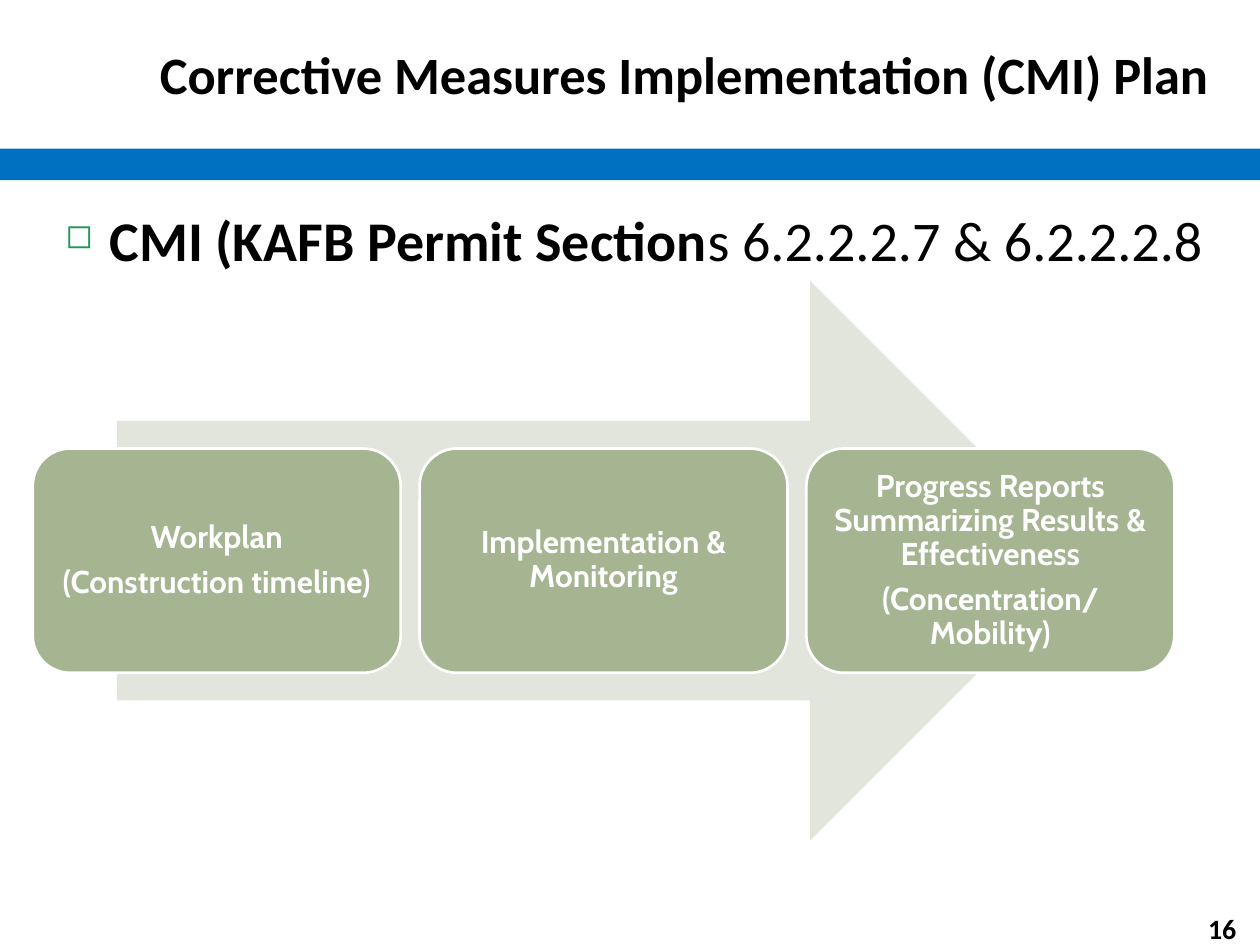
import pptx
import pptx.util
import pptx.dml.color
import pptx.enum.shapes
import pptx.enum.text
import pptx.oxml
import pptx.oxml.ns
from pptx.util import Inches, Pt

# Content
TITLE = "Corrective Measures Implementation (CMI) Plan"
BULLET_RUNS = [("CMI (KAFB Permit Section", True), ("s 6.2.2.2.7 & 6.2.2.2.8", False)]
STEPS = [
    ["Workplan", "(Construction timeline)"],
    ["Implementation & Monitoring"],
    ["Progress Reports Summarizing Results & Effectiveness", "(Concentration/Mobility)"],
]
PAGE_NUMBER = "16"

THEME = {
    "band": "0070C0", "arrow": "E1E5DC", "step": "A5B592", "bullet": "199755",
    "light": "FFFFFF", "dark": "000000",
    "text_font": "Calibri", "step_font": "Cabin",
    "title_size": 30, "bullet_size": 32, "step_size": 18, "page_size": 16,
}

# Step layout
STEP_LEFT, STEP_TOP, STEP_WIDTH, STEP_HEIGHT, STEP_GAP = 0.26, 3.56, 2.92, 1.78, 0.15

SHAPES = pptx.enum.shapes.MSO_SHAPE
MIDDLE = pptx.enum.text.MSO_ANCHOR.MIDDLE
CENTER = pptx.enum.text.PP_ALIGN.CENTER


def color(name):
    return pptx.dml.color.RGBColor.from_string(THEME[name])


def add_run(paragraph, text, size, font="text_font", ink="dark", bold=True):
    run = paragraph.add_run()
    run.text = text
    run.font.name = THEME[font]
    run.font.size = Pt(THEME[size])
    run.font.bold = bold
    run.font.color.rgb = color(ink)


def add_text_frame(slide, left, top, width, height, anchor=MIDDLE):
    box = slide.shapes.add_textbox(Inches(left), Inches(top), Inches(width), Inches(height))
    frame = box.text_frame
    frame.word_wrap = True
    frame.vertical_anchor = anchor
    return frame


def add_filled_shape(slide, kind, left, top, width, height, fill):
    shape = slide.shapes.add_shape(
        kind, Inches(left), Inches(top), Inches(width), Inches(height))
    shape.shadow.inherit = False
    shape.fill.solid()
    shape.fill.fore_color.rgb = color(fill)
    shape.line.fill.background()
    return shape


def set_bullet(paragraph, indent):
    properties = paragraph._p.get_or_add_pPr()
    properties.set("marL", str(Inches(indent)))
    properties.set("indent", str(-Inches(indent)))
    namespace = pptx.oxml.ns.nsdecls("a")
    for element in (
        f'<a:buClr {namespace}><a:srgbClr val="{THEME["bullet"]}"/></a:buClr>',
        f'<a:buSzPct {namespace} val="60000"/>',
        f'<a:buChar {namespace} char="◻"/>',
    ):
        properties.append(pptx.oxml.parse_xml(element))


def add_step(slide, index, lines):
    left = STEP_LEFT + index * (STEP_WIDTH + STEP_GAP)
    step = add_filled_shape(slide, SHAPES.ROUNDED_RECTANGLE,
                            left, STEP_TOP, STEP_WIDTH, STEP_HEIGHT, "step")
    step.line.color.rgb = color("light")
    step.line.width = Pt(1.5)
    frame = step.text_frame
    frame.word_wrap = True
    frame.vertical_anchor = MIDDLE
    frame.margin_left = frame.margin_right = Inches(0.07)
    frame.margin_top = frame.margin_bottom = Inches(0.07)
    for number, line in enumerate(lines):
        paragraph = frame.add_paragraph() if number else frame.paragraphs[0]
        paragraph.alignment = CENTER
        paragraph.line_spacing = 0.9
        paragraph.space_after = Pt(0.35 * THEME["step_size"])
        add_run(paragraph, line, "step_size", "step_font", "light")


def main():
    presentation = pptx.Presentation()
    presentation.slide_width = Inches(10)
    presentation.slide_height = Inches(7.5)
    slide = presentation.slides.add_slide(presentation.slide_layouts[6])

    # Band, page number and title
    add_filled_shape(slide, SHAPES.RECTANGLE, 0, 1.18, 10, 0.25, "band")
    page = add_text_frame(slide, 9.41, 7.23, 0.58, 0.27).paragraphs[0]
    page.alignment = CENTER
    add_run(page, PAGE_NUMBER, "page_size")
    title = add_text_frame(slide, 1.17, 0.04, 8.66, 1.08).paragraphs[0]
    add_run(title, TITLE, "title_size")

    # Bullet line
    bullet = add_text_frame(slide, 0.42, 1.58, 9.42, 0.65,
                            pptx.enum.text.MSO_ANCHOR.TOP).paragraphs[0]
    set_bullet(bullet, 0.35)
    for text, bold in BULLET_RUNS:
        add_run(bullet, text, "bullet_size", bold=bold)

    # Process arrow and its steps
    add_filled_shape(slide, SHAPES.RIGHT_ARROW, 0.93, 2.23, 7.72, 4.44, "arrow")
    for index, lines in enumerate(STEPS):
        add_step(slide, index, lines)

    presentation.save("out.pptx")


if __name__ == "__main__":
    main()
